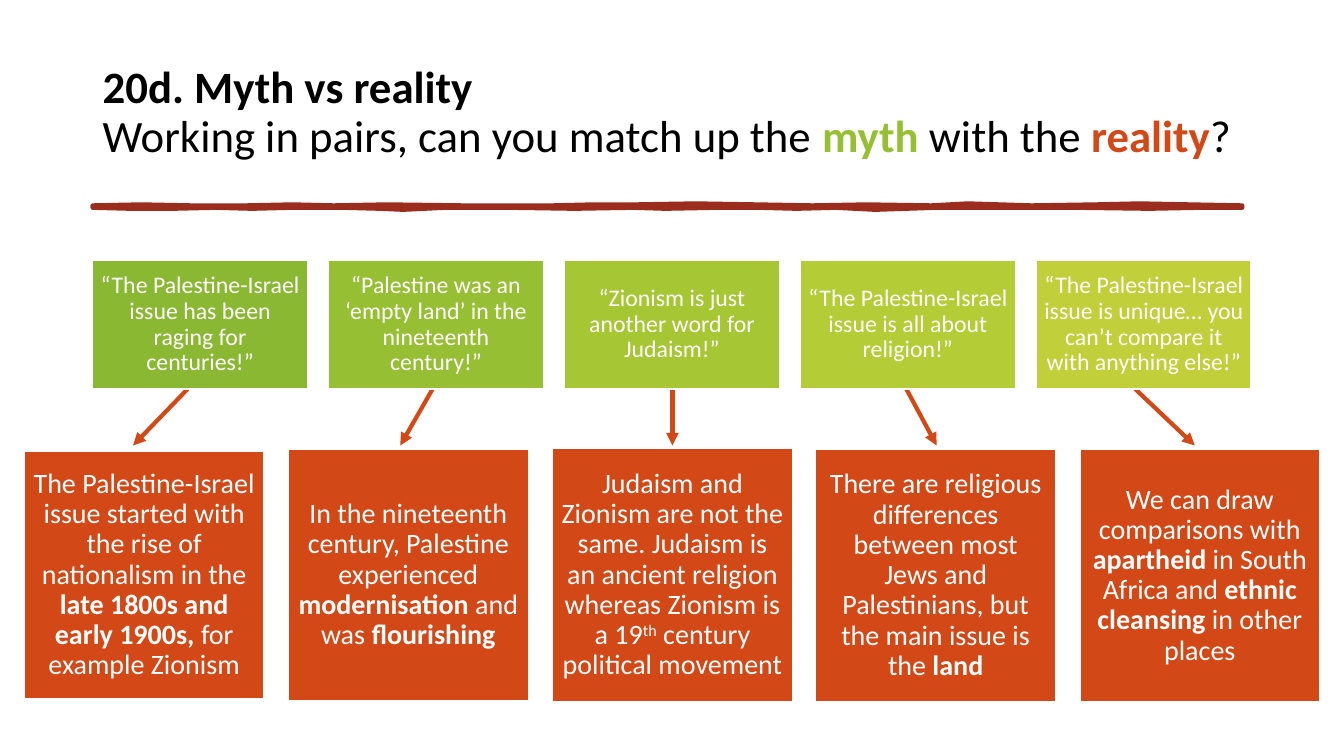
"""Build the slide that pairs five myths with five realities."""
from lxml import etree
from pptx import Presentation
from pptx.dml.color import RGBColor
from pptx.enum.shapes import MSO_CONNECTOR, MSO_SHAPE
from pptx.enum.text import MSO_ANCHOR, PP_ALIGN
from pptx.oxml.ns import qn
from pptx.util import Pt

PX = 9144

COLORS = {
    "text": "000000", "white": "FFFFFF", "rule": "9B2D1F",
    "myth": "97BF33", "reality": "D34817",
}

TITLE = [
    ("20d. Myth vs reality", "bold"), ("\n", ""),
    ("Working in pairs, can you match up the ", ""), ("myth", "myth"),
    (" with the ", ""), ("reality", "reality"), ("?", ""),
]

MYTHS = [
    ("“The Palestine-Israel issue has been raging for centuries!”", "8AB833"),
    ("“Palestine was an ‘empty land’ in the nineteenth century!”", "97BF33"),
    ("“Zionism is just another word for Judaism!”", "A6C634"),
    ("“The Palestine-Israel issue is all about religion!”", "B4CC35"),
    ("“The Palestine-Israel issue is unique… you can’t compare it with anything else!”", "C0CF3A"),
]

REALITIES = [
    (448, 245, [("The Palestine-Israel issue started with the rise of nationalism in the ", ""),
                ("late 1800s and early 1900s, ", "bold"), ("for example Zionism", "")]),
    (446, 249, [("In the nineteenth century, Palestine experienced ", ""),
                ("modernisation ", "bold"), ("and was", ""), (" flourishing", "bold")]),
    (445, 251, [("Judaism and Zionism are not the same. Judaism is an ancient religion "
                 "whereas Zionism is a 19", ""),
                ("th", "super"), (" century political movement", "")]),
    (446, 250, [("There are religious differences between most Jews and Palestinians, "
                 "but the main issue is the ", ""), ("land", "bold")]),
    (446, 250, [("We can draw comparisons with ", ""), ("apartheid", "bold"),
                (" in South Africa and ", ""), ("ethnic cleansing ", "bold"),
                ("in other places", "")]),
]

ARROWS = [(186, 132), (429, 397), (667, 667), (899, 929), (1126, 1185)]
ARROW_TOP, ARROW_BOTTOM = 386, 442

RULE_TOP = [(92, 204), (140, 203), (190, 204), (244, 204), (290, 203), (331, 204),
            (384, 203), (460, 204), (548, 204), (589, 203), (631, 203), (690, 202),
            (750, 203), (806, 204), (860, 203), (924, 204), (960, 202), (1023, 204),
            (1087, 203), (1130, 202), (1180, 203), (1232, 204)]
RULE_BOTTOM = [(1232, 206), (1190, 206), (1140, 207), (1068, 206), (981, 206),
               (928, 206), (868, 208), (829, 206), (790, 207), (753, 206), (711, 206),
               (660, 207), (627, 206), (570, 207), (506, 206), (441, 206), (400, 208),
               (377, 207), (340, 206), (289, 206), (250, 207), (213, 206), (171, 207),
               (130, 207), (92, 206)]


def rgb(name):
    return RGBColor.from_string(COLORS.get(name, name))


def write(frame, runs, size, color, align, inset=None):
    frame.word_wrap = True
    frame.vertical_anchor = MSO_ANCHOR.MIDDLE
    if inset is not None:
        for side in ("left", "top", "right", "bottom"):
            setattr(frame, f"margin_{side}", inset * PX)
    paragraph = frame.paragraphs[0]
    for name, value in {"alignment": align, "line_spacing": 0.9}.items():
        setattr(paragraph, name, value)
    for text, style in runs:
        if text == "\n":
            paragraph.add_line_break()
            continue
        run = paragraph.add_run()
        run.text = text
        formats = {"name": "Calibri", "size": Pt(size),
                   "bold": style in ("bold", "myth", "reality")}
        for name, value in formats.items():
            setattr(run.font, name, value)
        run.font.color.rgb = rgb(style if style in COLORS else color)
        if style == "super":
            run._r.get_or_add_rPr().set("baseline", "30000")


def paint(shape, fill, line, width):
    shape.shadow.inherit = False
    shape.fill.solid()
    shape.fill.fore_color.rgb = rgb(fill)
    shape.line.color.rgb = rgb(line)
    shape.line.width = Pt(width)


def add_card(shapes, box, fill, runs, size, inset):
    card = shapes.add_shape(MSO_SHAPE.RECTANGLE, *(n * PX for n in box))
    paint(card, fill, "white", 1)
    write(card.text_frame, runs, size, "white", PP_ALIGN.CENTER, inset)


def add_arrow(shapes, start, end):
    arrow = shapes.add_connector(MSO_CONNECTOR.STRAIGHT, start * PX, ARROW_TOP * PX,
                                 end * PX, ARROW_BOTTOM * PX)
    arrow.line.color.rgb = rgb("reality")
    arrow.line.width = Pt(3)
    etree.SubElement(arrow.line._get_or_add_ln(), qn("a:tailEnd"), type="triangle")
    etree.SubElement(arrow._element.spPr, qn("a:effectLst"))


def main():
    deck = Presentation()
    deck.slide_width, deck.slide_height = 1333 * PX, 750 * PX
    shapes = deck.slides.add_slide(deck.slide_layouts[6]).shapes

    outline = shapes.build_freeform(*RULE_TOP[0], scale=PX)
    outline.add_line_segments(RULE_TOP[1:] + RULE_BOTTOM, close=True)
    paint(outline.convert_to_shape(), "rule", "rule", 3.25)

    for i, (top, height, runs) in enumerate(REALITIES):
        left = round(24 + i * 261.75)
        add_card(shapes, (left, top, 238, height), "reality", runs, 20, 8)
    for start, end in ARROWS:
        add_arrow(shapes, start, end)
    for i, (myth, green) in enumerate(MYTHS):
        add_card(shapes, (92 + i * 234, 258, 213, 128), green, [(myth, "")], 17, 7)

    title = shapes.add_textbox(*(n * PX for n in (92, 40, 1150, 145)))
    write(title.text_frame, TITLE, 32, "text", PP_ALIGN.LEFT)
    deck.save("out.pptx")


if __name__ == "__main__":
    main()
